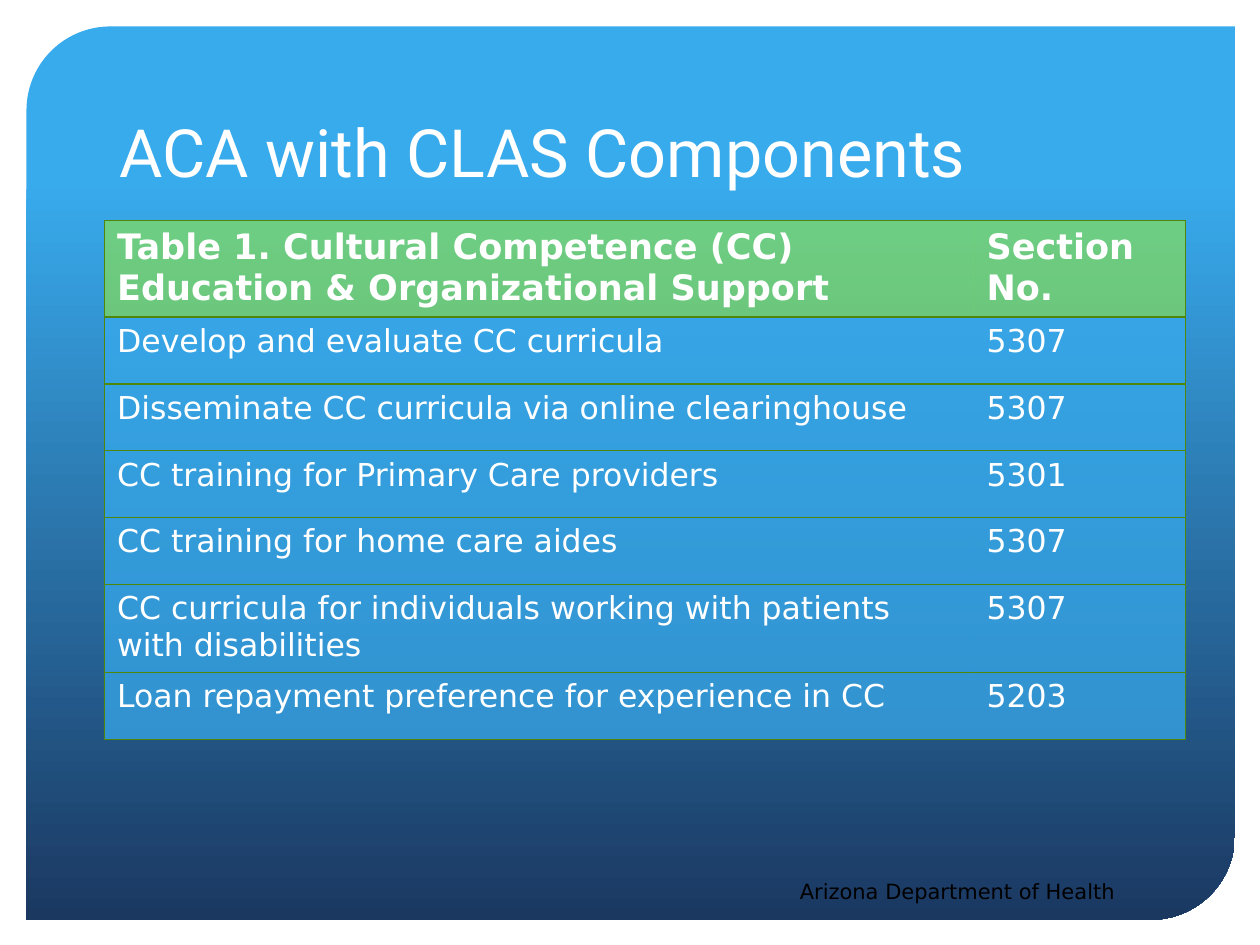
import pptx
import pptx.dml.color
import pptx.enum.shapes
import pptx.enum.text
import pptx.oxml
import pptx.oxml.ns
import pptx.util

RGBColor = pptx.dml.color.RGBColor
WHITE = RGBColor(0xFF, 0xFF, 0xFF)
BLACK = RGBColor(0x00, 0x00, 0x00)
SKY = RGBColor(0x38, 0xAB, 0xED)
NAVY = RGBColor(0x1B, 0x38, 0x61)
LIME = RGBColor(0x9D, 0xF1, 0x31)
OLIVE = RGBColor(0x50, 0x87, 0x09)

WIDTH, HEIGHT = pptx.util.Inches(10), pptx.util.Inches(7.5)
COLUMNS, ROWS = 100, 75

HEADER = ("Table 1. Cultural Competence (CC) Education & Organizational Support", "Section No.")
PROVISIONS = [
    ("Develop and evaluate CC curricula", "5307"),
    ("Disseminate CC curricula via online clearinghouse", "5307"),
    ("CC training for Primary Care providers", "5301"),
    ("CC training for home care aides", "5307"),
    ("CC curricula for individuals working with patients with disabilities", "5307"),
    ("Loan repayment preference for experience in CC", "5203"),
]


def across(columns):
    """Return the length of a number of grid columns."""
    return round(WIDTH * columns / COLUMNS)


def down(rows):
    """Return the length of a number of grid rows."""
    return round(HEIGHT * rows / ROWS)


def place(left, top, width, height):
    """Turn a grid position into slide lengths."""
    return across(left), down(top), across(width), down(height)


def write(frame, text, size, color, face, bold=False):
    """Put one formatted paragraph into a text frame."""
    frame.text = text
    frame.word_wrap = True
    font = frame.paragraphs[0].runs[0].font
    font.size = pptx.util.Pt(size)
    font.name = face
    font.bold = bold
    font.color.rgb = color


def add_backdrop(slide):
    """Draw the gradient panel with two rounded corners."""
    panel = slide.shapes.add_shape(
        pptx.enum.shapes.MSO_SHAPE.ROUND_2_DIAG_RECTANGLE, *place(2.1, 2.1, 95.9, 70.9))
    panel.adjustments[0] = 0.094
    panel.adjustments[1] = 0
    panel.shadow.inherit = False
    panel.line.fill.background()
    panel.fill.gradient()
    panel.fill.gradient_angle = 270
    for stop, position, color in zip(panel.fill.gradient_stops, (0.17, 1), (SKY, NAVY)):
        stop.position = position
        stop.color.rgb = color


def add_text(slide, position, text, size, color, face, anchor):
    """Add a text box with a single line of text."""
    box = slide.shapes.add_textbox(*place(*position))
    box.text_frame.vertical_anchor = anchor
    write(box.text_frame, text, size, color, face)
    return box


def set_borders(cell, sides):
    """Line the given sides of a cell and clear the others."""
    properties = cell._tc.get_or_add_tcPr()
    for index, side in enumerate("LRTB"):
        paint = (f'<a:solidFill><a:srgbClr val="{OLIVE}"/></a:solidFill>'
                 if side in sides else "<a:noFill/>")
        properties.insert(index, pptx.oxml.parse_xml(
            f'<a:ln{side} {pptx.oxml.ns.nsdecls("a")} w="{pptx.util.Pt(1)}">{paint}</a:ln{side}>'))


def set_fill(cell, color, opacity):
    """Fill a cell with a partly transparent colour."""
    cell.fill.solid()
    cell.fill.fore_color.rgb = color
    tint = cell._tc.tcPr.find(".//" + pptx.oxml.ns.qn("a:srgbClr"))
    tint.append(pptx.oxml.parse_xml(
        f'<a:alpha {pptx.oxml.ns.nsdecls("a")} val="{opacity * 1000}"/>'))


def add_provisions(slide):
    """Add the table of provisions and their section numbers."""
    entries = [HEADER, *PROVISIONS]
    table = slide.shapes.add_table(
        len(entries), len(HEADER), *place(8.3, 17.5, 85.8, 39.3)).table
    table.first_row = table.horz_banding = False
    for column, width in zip(table.columns, (69, 16.8)):
        column.width = across(width)
    for index, entry in enumerate(entries):
        heading = index == 0
        table.rows[index].height = down(7.5 if heading else 5.3)
        for position, text in enumerate(entry):
            cell = table.cell(index, position)
            write(cell.text_frame, text, 20 if heading else 18, WHITE, "DejaVu Sans", heading)
            set_fill(cell, *((LIME, 54) if heading else (SKY, 72)))
            set_borders(cell, ("LTB", "RTB")[position])


def main():
    """Build and save the slide."""
    presentation = pptx.Presentation()
    presentation.slide_width, presentation.slide_height = WIDTH, HEIGHT
    slide = presentation.slides.add_slide(presentation.slide_layouts[6])
    anchors = pptx.enum.text.MSO_ANCHOR
    add_backdrop(slide)
    add_text(slide, (8.5, 4.2, 82.9, 11.4), "ACA with CLAS Components",
             38, WHITE, "Roboto", anchors.BOTTOM)
    add_provisions(slide)
    agency = add_text(slide, (62.5, 69.2, 28.3, 3), "Arizona Department of Health",
                      12, BLACK, "DejaVu Sans", anchors.TOP)
    agency.text_frame.auto_size = pptx.enum.text.MSO_AUTO_SIZE.SHAPE_TO_FIT_TEXT
    presentation.save("out.pptx")


if __name__ == "__main__":
    main()
